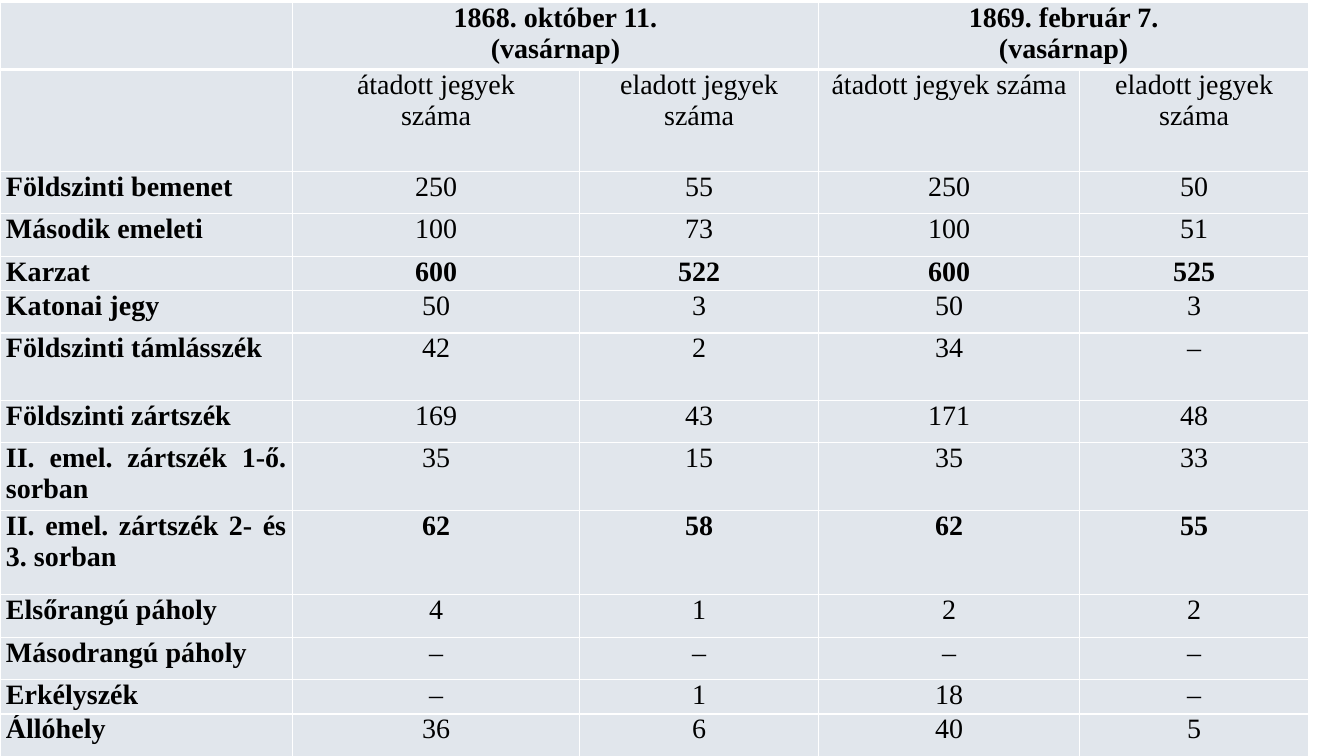
from lxml import etree
from pptx import Presentation
from pptx.dml.color import RGBColor
from pptx.enum.text import PP_ALIGN
from pptx.oxml.ns import qn
from pptx.util import Cm, Pt

CENTER, JUSTIFY = PP_ALIGN.CENTER, PP_ALIGN.JUSTIFY
BLACK = RGBColor(0x00, 0x00, 0x00)
WHITE = RGBColor(0xFF, 0xFF, 0xFF)
SLATE = RGBColor(0x84, 0x97, 0xB0)
OPACITY = 24000  # thousandths of a percent
FONT = {"name": "Times New Roman", "size": Pt(20)}
MARGINS = {"margin_left": Cm(0.15), "margin_right": Cm(0.15),
           "margin_top": 0, "margin_bottom": 0}

COLUMN_WIDTHS = [7.37, 7.24, 6.02, 6.58, 5.77]
TIGHT, LOW, DOUBLE, TALL, HEADING = 0.86, 1.07, 1.7, 2.13, 2.57

# Row height, bold figures, texts; a line break starts a new paragraph
TICKET_ROWS = [
    (DOUBLE, True, ["", "1868. október 11.\n(vasárnap)", "",
                    "1869. február 7.\n(vasárnap)", ""]),
    (HEADING, False, ["", "átadott jegyek\nszáma", "eladott jegyek\nszáma",
                      "átadott jegyek száma", "eladott jegyek száma"]),
    (LOW, False, ["Földszinti bemenet", "250", "55", "250", "50"]),
    (LOW, False, ["Második emeleti", "100", "73", "100", "51"]),
    (TIGHT, True, ["Karzat", "600", "522", "600", "525"]),
    (LOW, False, ["Katonai jegy", "50", "3", "50", "3"]),
    (DOUBLE, False, ["Földszinti támlásszék", "42", "2", "34", "‒"]),
    (LOW, False, ["Földszinti zártszék", "169", "43", "171", "48"]),
    (DOUBLE, False, ["II. emel. zártszék 1-ő. sorban", "35", "15", "35", "33"]),
    (TALL, True, ["II. emel. zártszék 2- és 3. sorban", "62", "58", "62", "55"]),
    (LOW, False, ["Elsőrangú páholy", "4", "1", "2", "2"]),
    (LOW, False, ["Másodrangú páholy", "‒", "‒", "‒", "‒"]),
    (TIGHT, False, ["Erkélyszék", "‒", "1", "18", "‒"]),
    (LOW, False, ["Állóhely", "36", "6", "40", "5"]),
]


def apply_format(target, values):
    for attribute, value in values.items():
        setattr(target, attribute, value)


def paint_cell(cell, row):
    """Give a cell its translucent fill and white borders."""
    cell.fill.solid()
    cell.fill.fore_color.rgb = SLATE
    properties = cell._tc.get_or_add_tcPr()
    colour = properties.find(f"{qn('a:solidFill')}/{qn('a:srgbClr')}")
    etree.SubElement(colour, qn("a:alpha"), val=str(OPACITY))

    # The rule under the date row is thicker
    widths = {"a:lnL": 1, "a:lnR": 1,
              "a:lnT": 3 if row == 1 else 1, "a:lnB": 3 if row == 0 else 1}
    for index, (side, width) in enumerate(widths.items()):
        border = etree.Element(qn(side), w=str(Pt(width)))
        stroke = etree.SubElement(border, qn("a:solidFill"))
        etree.SubElement(stroke, qn("a:srgbClr"), val=str(WHITE))
        properties.insert(index, border)


def write_cell(cell, text, alignment, bold):
    apply_format(cell, MARGINS)
    cell.text = text
    for paragraph in cell.text_frame.paragraphs:
        paragraph.alignment = alignment
        apply_format(paragraph.font, {**FONT, "bold": bold})
        paragraph.font.color.rgb = BLACK


def add_ticket_table(slide, left, top, width, height):
    """Place the table of issued and sold tickets."""
    tickets = slide.shapes.add_table(
        len(TICKET_ROWS), len(COLUMN_WIDTHS), left, top, width, height).table
    apply_format(tickets, {"first_row": False, "horz_banding": False})
    for column, column_width in zip(tickets.columns, COLUMN_WIDTHS):
        column.width = Cm(column_width)

    for row, (row_height, bold, texts) in enumerate(TICKET_ROWS):
        tickets.rows[row].height = Cm(row_height)
        for column, text in enumerate(texts):
            cell = tickets.cell(row, column)
            is_seat = column == 0
            write_cell(cell, text, JUSTIFY if is_seat else CENTER,
                       bold or is_seat)
            paint_cell(cell, row)

    # Each date spans its two ticket columns
    for column in (1, 3):
        tickets.cell(0, column).merge(tickets.cell(0, column + 1))


def main():
    presentation = Presentation()
    presentation.slide_width, presentation.slide_height = Cm(33.87), Cm(19.05)
    slide = presentation.slides.add_slide(presentation.slide_layouts[6])
    table_height = sum(height for height, _, _ in TICKET_ROWS)
    add_ticket_table(slide, Cm(0), Cm(0.05),
                     Cm(sum(COLUMN_WIDTHS)), Cm(table_height))
    presentation.save("out.pptx")


if __name__ == "__main__":
    main()
